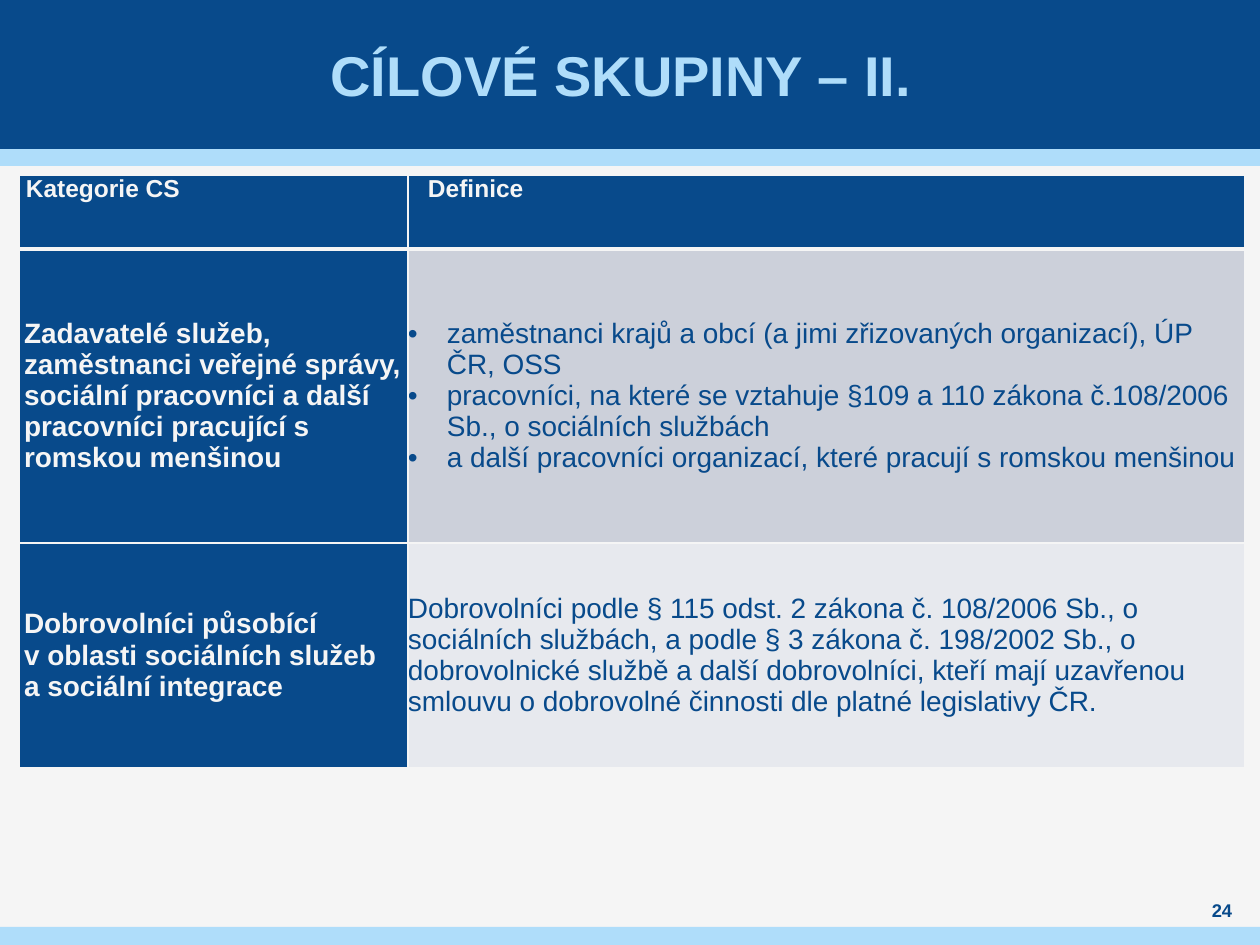
from lxml.etree import SubElement
from pptx import Presentation
from pptx.dml.color import RGBColor as RGB
from pptx.enum.shapes import MSO_SHAPE as SHAPE
from pptx.enum.text import MSO_ANCHOR as ANCHOR, PP_ALIGN as ALIGN
from pptx.oxml.ns import qn
from pptx.util import Emu, Pt

COLORS = {"navy": "084A8B", "sky": "AFDDFA", "paper": "F5F5F5",
          "band1": "CCD0DA", "band2": "E7E9EE"}
SCALE = 914400 / 126
FONT = "Arial"


def px(n):
    return Emu(round(n * SCALE))


def rgb(name):
    return RGB.from_string(COLORS[name])


class Deck:
    """Holds the style and the current slide."""

    def __init__(self, prs):
        self.prs = prs
        self.s = prs.slides.add_slide(prs.slide_layouts[5])
        fill = self.s.background.fill
        fill.solid()
        fill.fore_color.rgb = rgb("paper")

    def frame(self, tf, anchor=ANCHOR.MIDDLE, side=0):
        values = {"margin_left": px(side), "margin_right": px(side),
                  "margin_top": 0, "margin_bottom": 0,
                  "vertical_anchor": anchor, "word_wrap": True}
        for name, value in values.items():
            setattr(tf, name, value)

    def para(self, p, text, size, color, bold=True, align=ALIGN.LEFT):
        p.text = text
        p.alignment = align
        values = {"name": FONT, "size": Pt(size), "bold": bold}
        for r in p.runs:
            for name, value in values.items():
                setattr(r.font, name, value)
            r.font.color.rgb = rgb(color)

    def indent(self, p, left, bullet=False):
        pPr = p._p.get_or_add_pPr()
        pPr.set("marL", str(px(left)))
        pPr.set("indent", str(-px(left) if bullet else 0))
        if bullet:
            SubElement(pPr, qn("a:buFont"), typeface=FONT)
            SubElement(pPr, qn("a:buChar"), char="•")

    def band(self, top, height, color):
        sp = self.s.shapes.add_shape(SHAPE.RECTANGLE, 0, px(top),
                                     self.prs.slide_width, px(height))
        sp.shadow.inherit = False
        sp.fill.solid()
        sp.fill.fore_color.rgb = rgb(color)
        sp.line.fill.background()

    def title(self, text, x, y, w, h):
        sp = self.s.shapes.title
        sp.left, sp.top, sp.width, sp.height = map(px, (x, y, w, h))
        self.frame(sp.text_frame, side=5)
        self.para(sp.text_frame.paragraphs[0], text, 32, "sky",
                  align=ALIGN.CENTER)
        # Bring the title in front of the bands
        sp.element.getparent().append(sp.element)

    def label(self, text, x, y, w, h):
        sp = self.s.shapes.add_textbox(*map(px, (x, y, w, h)))
        self.frame(sp.text_frame)
        self.para(sp.text_frame.paragraphs[0], text, 10.5, "navy",
                  align=ALIGN.CENTER)

    def borders(self, cell, widths):
        tcPr = cell._tc.get_or_add_tcPr()
        for side, width in widths.items():
            ln = SubElement(tcPr, qn("a:ln" + side), w=str(Pt(width)))
            fill = SubElement(ln, qn("a:solidFill"))
            SubElement(fill, qn("a:srgbClr"), val=COLORS["paper"])

    def cell(self, cell, texts, fill, color, size, bold, left, widths,
             anchor=ANCHOR.MIDDLE, bullet=False):
        self.borders(cell, widths)
        cell.fill.solid()
        cell.fill.fore_color.rgb = rgb(fill)
        for name in ("left", "right", "top", "bottom"):
            setattr(cell, "margin_" + name, 0)
        cell.vertical_anchor = anchor
        tf = cell.text_frame
        for i, text in enumerate(texts):
            p = tf.add_paragraph() if i else tf.paragraphs[0]
            self.para(p, text, size, color, bold)
            self.indent(p, left, bullet)

    def table(self, x, y, cols, rows, header, body):
        table = self.s.shapes.add_table(
            len(rows), len(cols), px(x), px(y),
            px(sum(cols)), px(sum(rows))).table
        for col, width in zip(table.columns, cols):
            col.width = px(width)
        for row, height in zip(table.rows, rows):
            row.height = px(height)

        # Header row, with the thicker rule below it
        for c, (text, left) in enumerate(header):
            self.cell(table.cell(0, c), [text], "navy", "paper", 14, True,
                      left, {"L": 1, "R": 1, "T": 1, "B": 3}, ANCHOR.TOP)

        # Category on the left, definition on the right
        for n, (category, definition, fill) in enumerate(body, 1):
            widths = {"L": 1, "R": 1, "T": 3 if n == 1 else 1, "B": 1}
            bullet = len(definition) > 1
            self.cell(table.cell(n, 0), [category], "navy", "paper", 16,
                      True, 5, widths)
            self.cell(table.cell(n, 1), definition, fill, "navy", 16,
                      False, 39 if bullet else 0, widths, bullet=bullet)


HEADER = [(" Kategorie CS", 0), ("Definice", 20)]
BODY = [
    ("Zadavatelé služeb, zaměstnanci veřejné správy, sociální pracovníci "
     "a další pracovníci pracující s romskou menšinou",
     ["zaměstnanci krajů a obcí (a jimi zřizovaných organizací), ÚP ČR, OSS",
      "pracovníci, na které se vztahuje §109 a 110 zákona č.108/2006 Sb., "
      "o sociálních službách",
      "a další pracovníci organizací, které pracují s romskou menšinou"],
     "band1"),
    ("Dobrovolníci působící \vv oblasti sociálních služeb \v"
     "a sociální integrace",
     ["Dobrovolníci podle § 115 odst. 2 zákona č. 108/2006 Sb., o sociálních "
      "službách, a podle § 3 zákona č. 198/2002 Sb., o dobrovolnické službě "
      "a další dobrovolníci, kteří mají uzavřenou smlouvu o dobrovolné "
      "činnosti dle platné legislativy ČR."],
     "band2"),
]


def main():
    prs = Presentation()
    prs.slide_width, prs.slide_height = px(1260), px(945)
    deck = Deck(prs)

    # Header and footer bands
    deck.band(149, 17, "sky")
    deck.band(0, 149, "navy")
    deck.band(927, 18, "sky")
    deck.title("CÍLOVÉ SKUPINY – II. ", 49, 0, 1160, 149)

    # Target groups
    deck.table(19, 175, [389, 837], [74, 294, 225], HEADER, BODY)

    # Page number
    deck.label("24", 1190, 898, 64, 25)

    prs.save("out.pptx")


if __name__ == "__main__":
    main()
